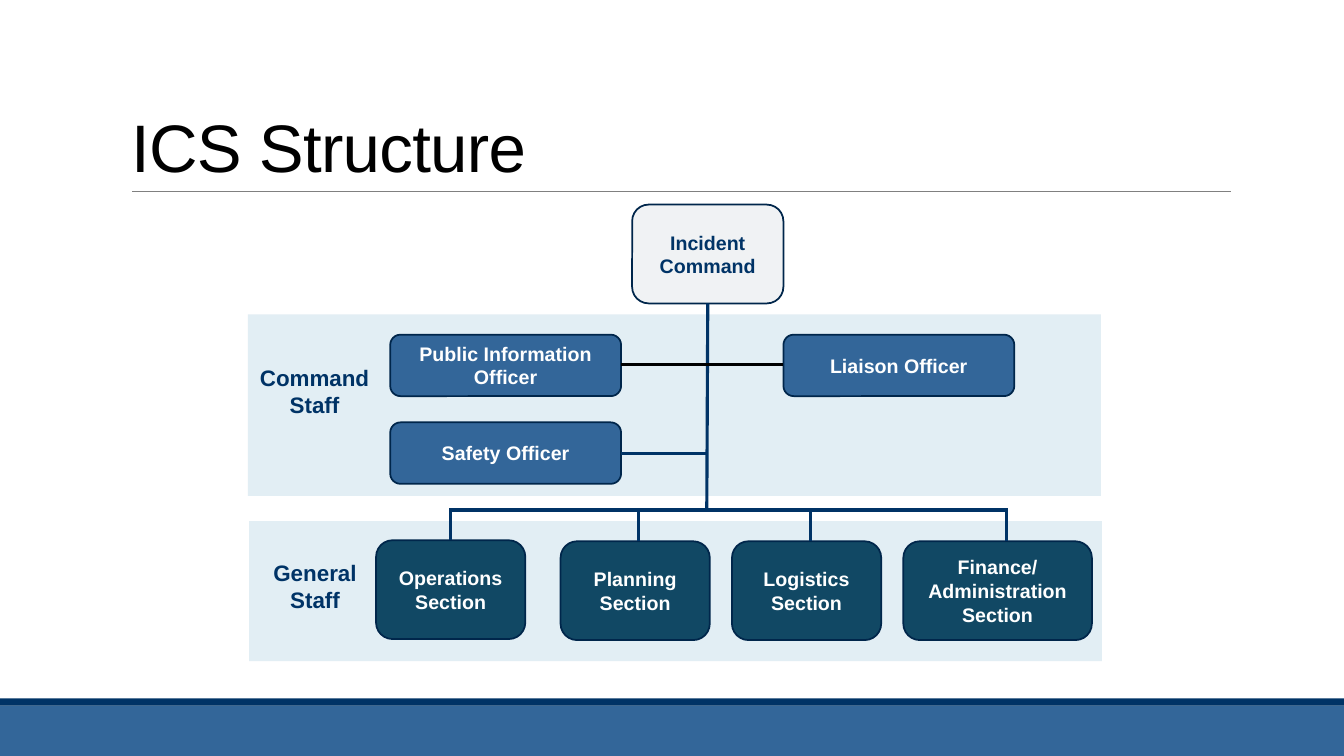
from dataclasses import dataclass

from lxml import etree
from pptx import Presentation
from pptx.dml.color import RGBColor
from pptx.enum.shapes import MSO_CONNECTOR, MSO_SHAPE
from pptx.enum.text import MSO_ANCHOR, MSO_AUTO_SIZE, PP_ALIGN
from pptx.oxml.ns import qn
from pptx.util import Inches, Pt

RECT = MSO_SHAPE.RECTANGLE
ROUND = MSO_SHAPE.ROUNDED_RECTANGLE
STRAIGHT = MSO_CONNECTOR.STRAIGHT
TOP, MIDDLE, BOTTOM = MSO_ANCHOR.TOP, MSO_ANCHOR.MIDDLE, MSO_ANCHOR.BOTTOM
LEFT, CENTER = PP_ALIGN.LEFT, PP_ALIGN.CENTER
NO_AUTOFIT = MSO_AUTO_SIZE.NONE


@dataclass(frozen=True)
class Theme:
    """Colours, font and type sizes of the slide."""
    font: str = "Arial"
    black: str = "000000"
    white: str = "FFFFFF"
    grey: str = "808080"
    navy: str = "003366"
    outline: str = "00264B"
    blue: str = "336699"
    teal: str = "114864"
    panel: str = "E2EEF4"
    pale: str = "F0F2F4"
    title: int = 48
    label: int = 16
    body: int = 14
    rule: float = 0.5
    border: float = 1.25
    link: float = 2.25


T = Theme()


def rgb(color):
    """Turn a hex string into a colour."""
    return RGBColor.from_string(color)


def add_text(tf, text, size, color, bold=True, align=CENTER, anchor=MIDDLE):
    """Fill a text frame with one formatted run."""
    tf.word_wrap = True
    tf.auto_size = NO_AUTOFIT
    tf.vertical_anchor = anchor
    p = tf.paragraphs[0]
    p.alignment = align
    r = p.add_run()
    r.text = text
    r.font.name, r.font.size, r.font.bold = T.font, Pt(size), bold
    r.font.color.rgb = rgb(color)
    return p, r


def add_block(s, kind, x, y, w, h, fill, border=None):
    """Add a filled shape, outlined if a border colour is given."""
    sp = s.shapes.add_shape(kind, Inches(x), Inches(y), Inches(w), Inches(h))
    sp.shadow.inherit = False
    sp.fill.solid()
    sp.fill.fore_color.rgb = rgb(fill)
    if border:
        sp.line.color.rgb = rgb(border)
        sp.line.width = Pt(T.border)
    else:
        sp.line.fill.background()
    return sp


def add_node(s, x, y, w, h, text, fill, color=T.white):
    """Add one rounded box of the organisation chart."""
    sp = add_block(s, ROUND, x, y, w, h, fill, T.outline)
    add_text(sp.text_frame, text, T.body, color)


def add_line(s, x1, y1, x2, y2, color=T.navy, width=T.link):
    """Add a straight line without shadow."""
    c = s.shapes.add_connector(STRAIGHT, Inches(x1), Inches(y1), Inches(x2), Inches(y2))
    c.line.color.rgb = rgb(color)
    c.line.width = Pt(width)
    etree.SubElement(c._element.spPr, qn("a:effectLst"))


def add_title(s, x, y, w, h):
    """Place the title and the rule below it."""
    title = s.shapes.title
    title.left, title.top, title.width, title.height = map(Inches, (x, y, w, h))
    p, r = add_text(title.text_frame, "ICS Structure", T.title, T.black, False, LEFT, BOTTOM)
    p.line_spacing = 0.85
    r.font._element.set("spc", "-50")
    add_line(s, x + 0.11, y + h, x + w + 0.01, y + h, T.grey, T.rule)


def add_footer(s, x, y, w, h):
    """Draw the two-tone band at the foot of the slide."""
    strip = 0.07
    add_block(s, RECT, x, y + strip, w, h - strip, T.blue)
    add_block(s, RECT, x, y, w, strip, T.navy)


def add_panel(s, x, y, w, h, label, dx, dy, label_w):
    """Draw a staff panel with its label offset from the panel corner."""
    add_block(s, RECT, x, y, w, h, T.panel)
    tb = s.shapes.add_textbox(Inches(x + dx), Inches(y + dy), Inches(label_w), Inches(0.64))
    add_text(tb.text_frame, label, T.label, T.navy, anchor=TOP)


def add_command_staff(s, x, y, w, h):
    """Draw the command staff panel and its officers."""
    add_panel(s, x, y, w, h, "Command Staff", -0.11, 0.44, 1.54)
    officers = [("Public Information Officer", 0, 0), ("Liaison Officer", 1, 0),
                ("Safety Officer", 0, 1)]
    for text, col, row in officers:
        add_node(s, x + 1.41 + 3.9 * col, y + 0.2 + 0.87 * row, 2.29, 0.61, text, T.blue)


def add_general_staff(s, x, y, w, h):
    """Draw the general staff panel, its sections and the lines above them."""
    add_panel(s, x, y, w, h, "General Staff", -0.01, 0.33, 1.33)
    sections = [("Operations Section", 1.26, 0.19, 1.48, 2.0),
                ("Planning Section", 3.09, 0.2, 1.48, 3.86),
                ("Logistics Section", 4.79, 0.2, 1.48, 5.57),
                ("Finance/ Administration Section", 6.49, 0.2, 1.87, 7.51)]
    bus = y - 0.11
    for text, dx, dy, node_w, drop in sections:
        add_node(s, x + dx, y + dy, node_w, 0.98, text, T.teal)
        add_line(s, x + drop, bus - 0.02, x + drop, y + dy)
    add_line(s, x + sections[0][-1], bus, x + sections[-1][-1], bus)


def add_incident_command(s, x, y, w, h):
    """Draw the top box, its trunk line and the branches to the officers."""
    add_node(s, x, y, w, h, "Incident Command", T.pale, T.navy)
    trunk, left = x + w / 2, x - 0.11
    add_line(s, trunk, y + h, trunk - 0.01, y + 3.04)
    add_line(s, left, y + 1.59, x + w, y + 1.59, T.black)
    add_line(s, left, y + 2.47, trunk - 0.01, y + 2.47)


def main():
    """Build and save the slide."""
    prs = Presentation()
    prs.slide_width, prs.slide_height = Inches(13.33), Inches(7.5)
    s = prs.slides.add_slide(prs.slide_layouts[5])
    add_footer(s, 0, 6.93, 13.33, 0.57)
    add_title(s, 1.2, 0.31, 11, 1.59)
    add_command_staff(s, 2.46, 3.12, 8.46, 1.8)
    add_general_staff(s, 2.47, 5.17, 8.46, 1.39)
    add_incident_command(s, 6.27, 2.03, 1.5, 0.98)
    prs.save("out.pptx")


if __name__ == "__main__":
    main()
